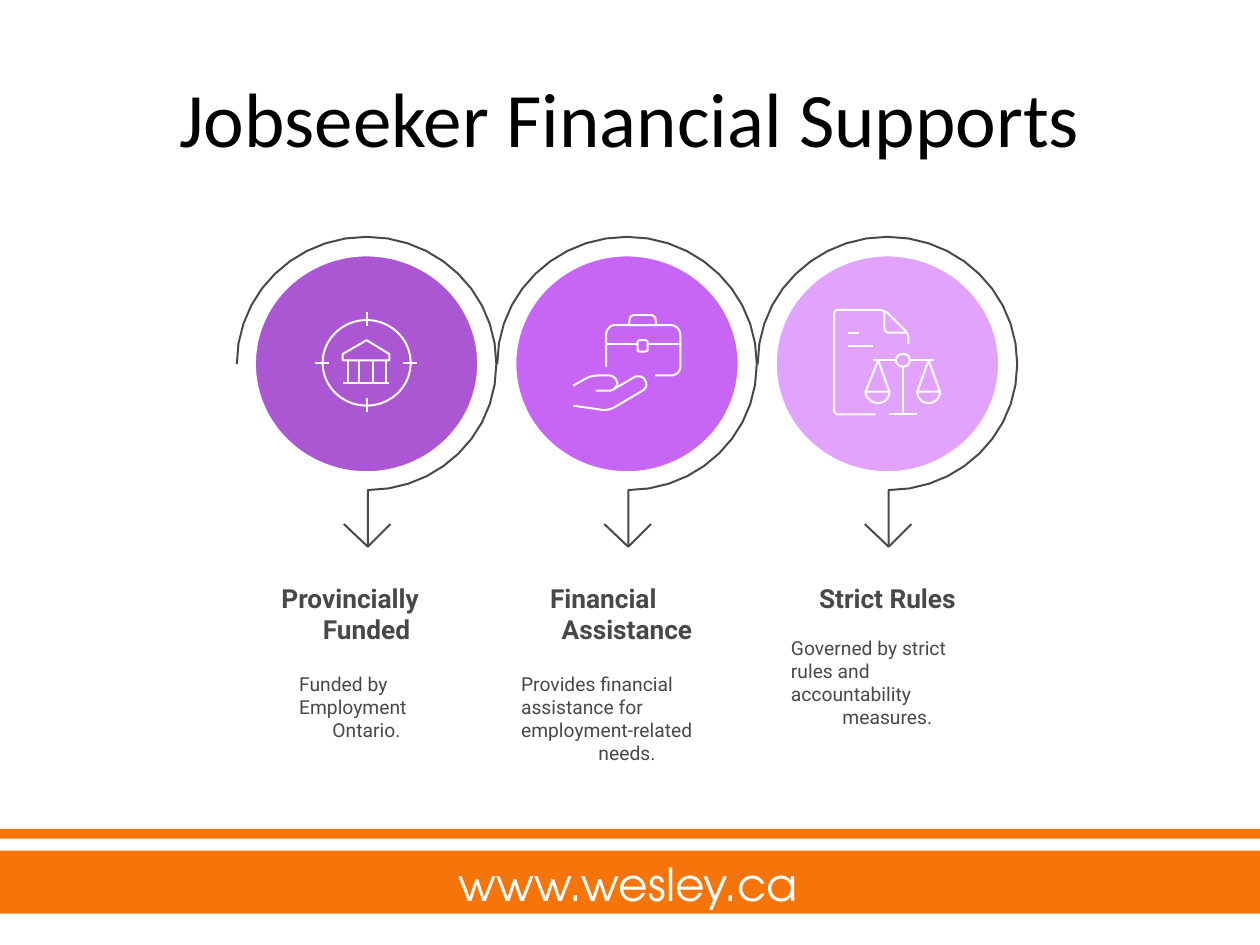
from pptx import Presentation
from pptx.dml.color import RGBColor
from pptx.enum.shapes import MSO_SHAPE
from pptx.enum.text import MSO_ANCHOR, MSO_AUTO_SIZE, PP_ALIGN
from pptx.util import Cm, Pt

WHITE = RGBColor(0xFF, 0xFF, 0xFF)
BLACK = RGBColor(0x00, 0x00, 0x00)
GREY = RGBColor(0x48, 0x48, 0x48)
ORANGE = RGBColor(0xF5, 0x75, 0x0B)
PURPLE = RGBColor(0xAB, 0x57, 0xD3)
VIOLET = RGBColor(0xC7, 0x65, 0xF4)
LILAC = RGBColor(0xE2, 0xA3, 0xFF)

TITLE = "Jobseeker Financial Supports"
WEBSITE = "www.wesley.ca"

RING_ARROW = """
M 188 289 C 188 233 234 188 291 188 348 188 394 233 394 289 394 345 348 389 292 389
L 292 434 M 273 416 L 292 434 310 416
"""
BANK_TARGET = """
M 291 248 L 291 259 M 291 316 L 291 327 M 331 288 L 320 288 M 261 288 L 250 288
M 256 288 C 256 307 272 322 291 322 310 322 326 307 326 288
326 269 310 254 291 254 272 254 256 269 256 288
M 272 281 L 291 270 309 281 309 286 272 286 Z
M 309 304 L 272 304 M 276 304 L 276 286 M 306 304 L 306 286
M 285 304 L 285 286 M 296 304 L 296 286
"""
HAND_BRIEFCASE = """
M 455 322 L 476 325 C 480 326 485 325 488 323 L 510 310
C 513 308 514 305 512 302 511 299 507 298 504 299 L 487 309
M 455 306 L 464 301 C 467 299 471 298 475 298 L 484 298
C 485 298 487 299 488 300 489 301 490 303 490 305 489 307 487 310 484 310 L 473 310
M 481 291 L 481 266 C 481 262 484 258 488 258 L 532 258 C 537 258 540 262 540 266
L 540 291 C 540 295 537 298 532 298 L 520 298
M 481 273 L 506 273 M 540 273 L 514 273
M 521 258 L 499 258 500 252 C 501 251 502 250 504 250 L 516 250 C 518 250 519 251 520 252 Z
M 508 270 L 512 270 C 512 270 514 270 514 272 L 514 278 C 514 278 514 279 512 279
L 508 279 C 508 279 506 279 506 278 L 506 272 C 506 272 506 270 508 270
"""
SCALES_PAGE = """
M 717 291 L 717 329 M 687 311 L 697 286 706 311
M 711 286 C 711 289 714 291 717 291 720 291 722 289 722 286
722 283 720 281 717 281 714 281 711 283 711 286 Z
M 722 286 L 741 286 M 693 286 L 711 286 M 706 329 L 728 329
M 706 311 L 687 311 C 687 316 692 320 697 320 702 320 706 316 706 311 Z
M 746 311 L 737 286 728 311
M 746 311 L 728 311 C 728 316 732 320 737 320 742 320 746 316 746 311 Z
M 695 329 L 665 329 C 663 329 662 327 662 325 L 662 250 C 662 248 663 246 665 246
L 699 246 C 701 247 703 247 705 249 L 718 262 C 720 264 721 266 721 268 L 721 273
M 702 247 L 702 261 C 702 263 704 264 706 264 L 720 264
M 673 264 L 682 264 M 673 275 L 693 275
"""

SUPPORTS = [
    (PURPLE, BANK_TARGET, ("Provincially\nFunded", 3.43),
     ("Funded by\nEmployment\nOntario.", 2.72)),
    (VIOLET, HAND_BRIEFCASE, ("Financial\nAssistance", 3.1),
     ("Provides financial\nassistance for\nemployment-related\nneeds.", 4.27)),
    (LILAC, SCALES_PAGE, ("Strict Rules", 3.25),
     ("Governed by strict\nrules and\naccountability\nmeasures.", 3.89)),
]

FIRST_CENTRE, PITCH = 7.39, 5.25
DISC_TOP, DISC_WIDTH, DISC_HEIGHT = 5.15, 4.5, 4.37
HEADING_TOP, HEADING_LINE, BODY_LINE, CAPTION_GAP = 11.73, 0.73, 0.55, 0.36
OUTLINE_UNIT = Cm(0.0254)
CURVE_STEPS = 10
LINE_WIDTH = Pt(1.12)


def bezier(start, first, second, end):
    for step in range(1, CURVE_STEPS + 1):
        t = step / CURVE_STEPS
        u = 1 - t
        yield tuple(u**3 * a + 3 * u * u * t * b + 3 * u * t * t * c + t**3 * d
                    for a, b, c, d in zip(start, first, second, end))


def trace(outline):
    strokes = []
    tokens = iter(outline.split())
    for token in tokens:
        if token.isalpha():
            command, controls = token, []
            if command == "Z":
                strokes[-1].append(strokes[-1][0])
            continue
        point = int(token), int(next(tokens))
        if command == "M":
            strokes.append([point])
        elif command == "L":
            strokes[-1].append(point)
        else:
            controls.append(point)
            if len(controls) == 3:
                strokes[-1].extend(bezier(strokes[-1][-1], *controls))
                controls = []
    return strokes


def draw_outline(shapes, outline, color, shift=0):
    strokes = [[(x * OUTLINE_UNIT + shift, y * OUTLINE_UNIT) for x, y in stroke]
               for stroke in trace(outline)]
    builder = shapes.build_freeform(*strokes[0][0])
    builder.add_line_segments(strokes[0][1:], close=False)
    for stroke in strokes[1:]:
        builder.move_to(*stroke[0])
        builder.add_line_segments(stroke[1:], close=False)
    drawing = builder.convert_to_shape()
    drawing.shadow.inherit = False
    drawing.fill.background()
    drawing.line.color.rgb = color
    drawing.line.width = LINE_WIDTH


def add_solid(shapes, preset, left, top, width, height, color):
    solid = shapes.add_shape(preset, Cm(left), Cm(top), Cm(width), Cm(height))
    solid.shadow.inherit = False
    solid.fill.solid()
    solid.fill.fore_color.rgb = color
    solid.line.fill.background()
    return solid


def add_text(shapes, text, left, top, width, height, font, size, color,
             bold=False, inset=0, wrap=False):
    box = shapes.add_textbox(Cm(left), Cm(top), Cm(width), Cm(height))
    frame = box.text_frame
    frame.margin_left = frame.margin_right = Cm(inset)
    frame.margin_top = frame.margin_bottom = Cm(inset)
    frame.word_wrap = wrap
    frame.auto_size = MSO_AUTO_SIZE.NONE if wrap else MSO_AUTO_SIZE.SHAPE_TO_FIT_TEXT
    paragraph = frame.paragraphs[0]
    paragraph.alignment = PP_ALIGN.CENTER
    paragraph.add_run().text = text
    style(paragraph.font, font, size, color, bold)


def style(font, name, size, color, bold=False):
    font.name, font.size, font.bold = name, Pt(size), bold
    font.color.rgb = color


def add_support(shapes, index, color, icon, heading, body):
    centre = FIRST_CENTRE + index * PITCH
    disc = add_solid(shapes, MSO_SHAPE.OVAL, centre - DISC_WIDTH / 2, DISC_TOP,
                     DISC_WIDTH, DISC_HEIGHT, color)
    disc.line.color.rgb = WHITE
    disc.line.width = LINE_WIDTH
    draw_outline(shapes, RING_ARROW, GREY, Cm(index * PITCH))
    draw_outline(shapes, icon, WHITE)
    top = HEADING_TOP
    for (text, width), line, size, bold in ((heading, HEADING_LINE, 15, True),
                                            (body, BODY_LINE, 11, False)):
        height = line * len(text.splitlines())
        add_text(shapes, text, centre - width / 2, top, width, height,
                 "Roboto", size, GREY, bold)
        top += height + CAPTION_GAP


def main():
    deck = Presentation()
    deck.slide_width, deck.slide_height = Cm(25.4), Cm(19.05)
    slide = deck.slides.add_slide(deck.slide_layouts[5])
    shapes = slide.shapes

    title = shapes.title
    title.left, title.top, title.width, title.height = Cm(1.27), Cm(0.76), Cm(22.86), Cm(3.18)
    title.text_frame.text = TITLE
    title.text_frame.vertical_anchor = MSO_ANCHOR.MIDDLE
    heading = title.text_frame.paragraphs[0]
    heading.alignment = PP_ALIGN.CENTER
    style(heading.font, "Calibri", 44, BLACK)

    for index, support in enumerate(SUPPORTS):
        add_support(shapes, index, *support)

    for top, height in ((17.15, 1.27), (16.71, 0.2)):
        add_solid(shapes, MSO_SHAPE.RECTANGLE, 0, top, 25.4, height, ORANGE)
    add_text(shapes, WEBSITE, 5.2, 17.15, 14.94, 1.27, "TeX Gyre Adventor", 26, WHITE,
             inset=0.1, wrap=True)

    deck.save("out.pptx")


if __name__ == "__main__":
    main()
